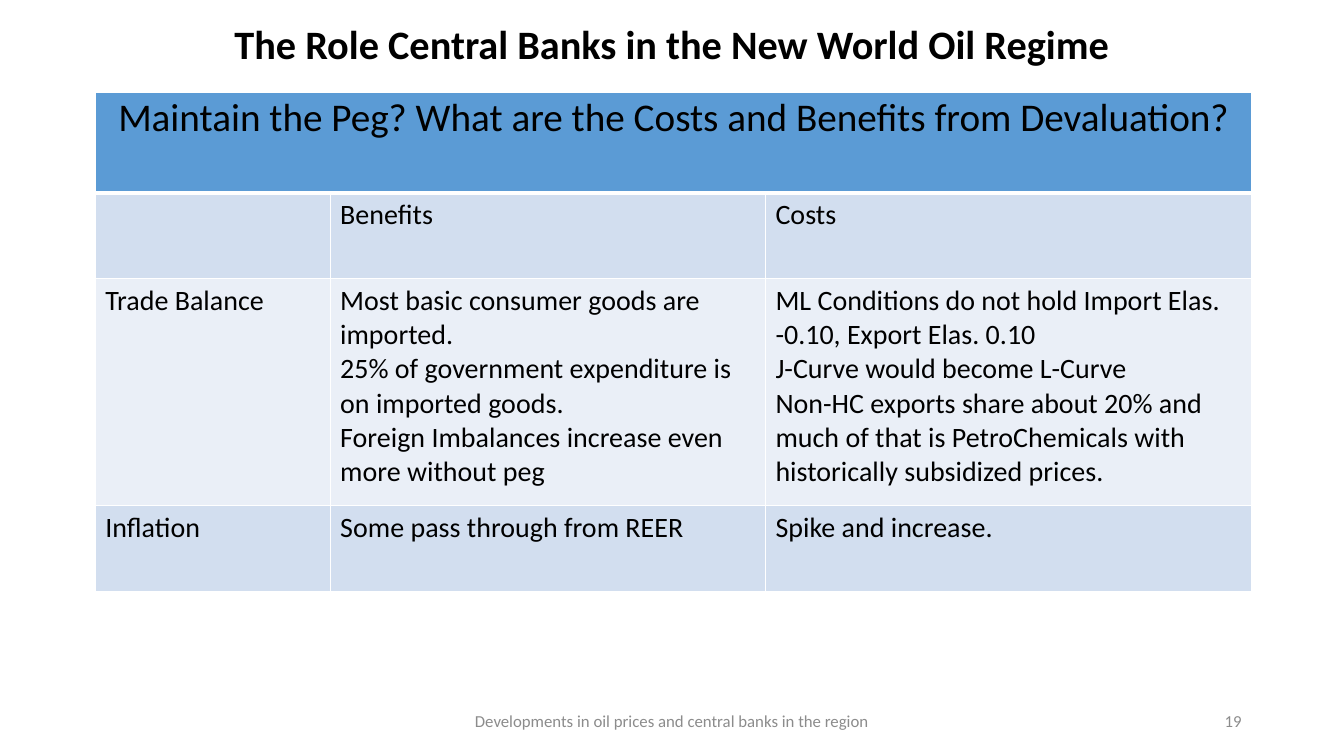
from dataclasses import dataclass
from lxml import etree
from pptx import Presentation
from pptx.dml.color import RGBColor
from pptx.enum.text import MSO_ANCHOR, MSO_AUTO_SIZE, PP_ALIGN
from pptx.oxml.ns import qn
from pptx.util import Cm, Pt

LEFT, MID, RIGHT = PP_ALIGN.LEFT, PP_ALIGN.CENTER, PP_ALIGN.RIGHT
CENTRE = MSO_ANCHOR.MIDDLE
FIXED = MSO_AUTO_SIZE.NONE


@dataclass
class Theme:
    font: str = "Calibri"
    ink: str = "000000"
    grey: str = "8C8C8C"
    rule: str = "FFFFFF"
    head: str = "5B9BD5"
    bands: tuple = ("D2DEEF", "EAEFF7")
    title: float = 28.8
    lead: float = 28
    body: float = 20
    note: float = 12


class Deck:
    def __init__(self, theme):
        self.theme = theme
        self.file = Presentation()
        self.file.slide_width, self.file.slide_height = Cm(33.87), Cm(19.05)
        self.slide = self.file.slides.add_slide(self.file.slide_layouts[5])

    def fill_text(self, frame, lines, size, color, align=LEFT, bold=False, space=1.0):
        frame.text = "\n".join(lines)
        frame.word_wrap = True
        look = {"name": self.theme.font, "size": Pt(size), "bold": bold}
        for para in frame.paragraphs:
            para.alignment, para.line_spacing = align, space
            for key, value in look.items():
                setattr(para.font, key, value)
            para.font.color.rgb = RGBColor.from_string(color)

    def place(self, shape, box):
        for key, value in zip(("left", "top", "width", "height"), box):
            setattr(shape, key, Cm(value))
        shape.text_frame.auto_size = FIXED
        shape.text_frame.vertical_anchor = CENTRE

    def title(self, text, box):
        shape = self.slide.shapes.title
        self.place(shape, box)
        self.fill_text(shape.text_frame, [text], self.theme.title, self.theme.ink, MID, True, 0.9)

    def note(self, text, box, align):
        shape = self.slide.shapes.add_textbox(*map(Cm, box))
        self.place(shape, box)
        self.fill_text(shape.text_frame, [text], self.theme.note, self.theme.grey, align)

    def border(self, cell, base):
        props = cell._tc.get_or_add_tcPr()
        sides = {"lnL": 1, "lnR": 1, "lnT": 1, "lnB": base}
        for spot, (side, width) in enumerate(sides.items()):
            line = etree.Element(qn(f"a:{side}"), w=str(Pt(width)))
            fill = etree.SubElement(line, qn("a:solidFill"))
            etree.SubElement(fill, qn("a:srgbClr"), val=self.theme.rule)
            props.insert(spot, line)

    def table(self, head, rows, spot, widths, heights):
        theme = self.theme
        size = sum(widths), sum(heights)
        grid = self.slide.shapes.add_table(
            len(heights), len(widths), *map(Cm, spot + size)).table
        for col, width in zip(grid.columns, widths):
            col.width = Cm(width)
        for row, height in zip(grid.rows, heights):
            row.height = Cm(height)
        grid.cell(0, 0).merge(grid.cell(0, len(widths) - 1))
        self.fill_text(grid.cell(0, 0).text_frame, [head], theme.lead, theme.ink, MID, space=0.9)
        for r, row in enumerate(grid.rows):
            for c, cell in enumerate(row.cells):
                cell.fill.solid()
                tint = theme.bands[(r - 1) % 2] if r else theme.head
                cell.fill.fore_color.rgb = RGBColor.from_string(tint)
                self.border(cell, 1 if r else 3)
                if r:
                    self.fill_text(cell.text_frame, rows[r - 1][c], theme.body, theme.ink)


def main():
    deck = Deck(Theme())
    deck.title("The Role Central Banks in the New World Oil Regime", (2.33, 0.41, 29.21, 1.52))
    rows = [
        [[], ["Benefits"], ["Costs"]],
        [["Trade Balance"],
         ["Most basic consumer goods are imported.",
          "25% of government expenditure is on imported goods.",
          "Foreign Imbalances increase even more without peg"],
         ["ML Conditions do not hold Import Elas. -0.10, Export Elas. 0.10",
          "J-Curve would become L-Curve",
          "Non-HC exports share about 20% and much of that is PetroChemicals "
          "with historically subsidized prices."]],
        [["Inflation"], ["Some pass through from REER"], ["Spike and increase."]],
    ]
    deck.table("Maintain the Peg? What are the Costs and Benefits from Devaluation?",
               rows, (2.4, 2.32), (5.92, 10.97, 12.25), (2.54, 2.16, 5.72, 2.16))
    deck.note("Developments in oil prices and central banks in the region",
              (11.22, 17.66, 11.43, 1.01), MID)
    deck.note("19", (23.92, 17.66, 7.62, 1.01), RIGHT)
    deck.file.save("out.pptx")


if __name__ == "__main__":
    main()
